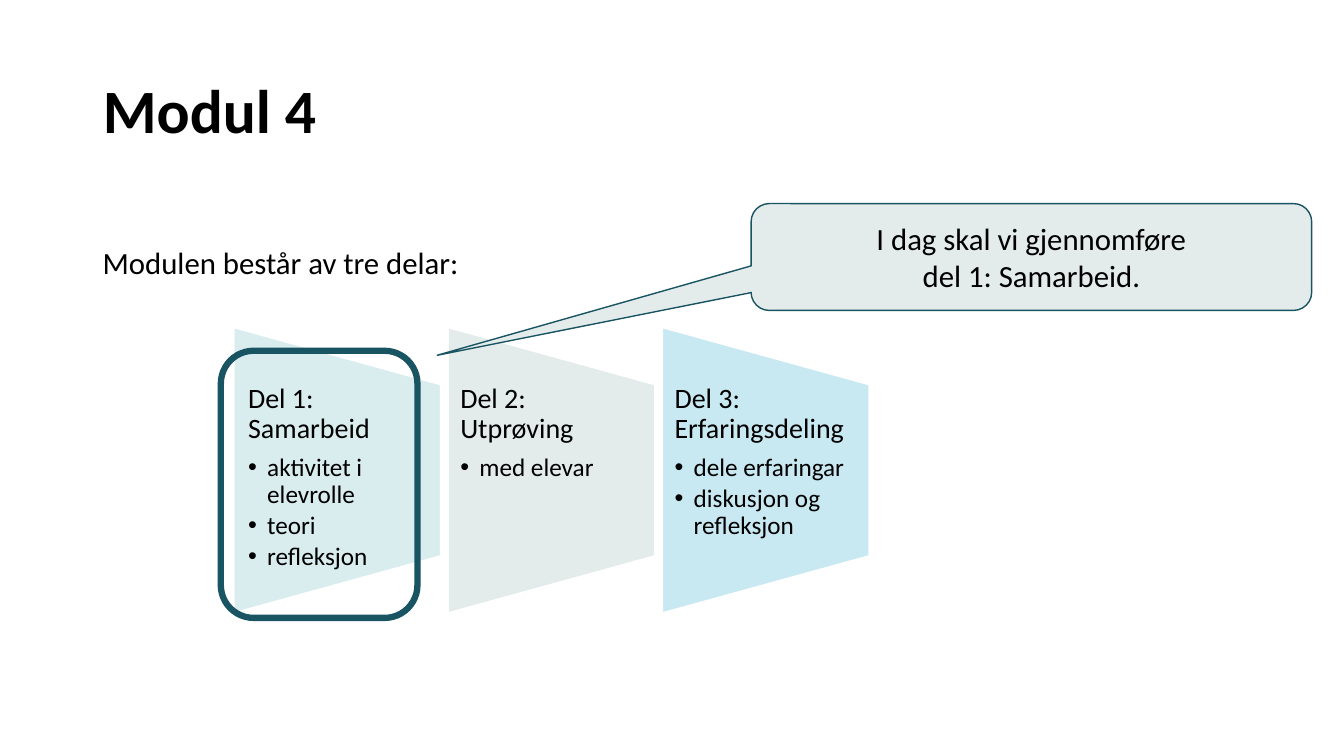
from lxml import etree
from pptx import Presentation
from pptx.dml.color import RGBColor as RGB
from pptx.enum.shapes import MSO_SHAPE as Shape
from pptx.enum.text import MSO_ANCHOR as Anchor, PP_ALIGN as Align
from pptx.oxml.ns import qn
from pptx.util import Inches, Pt

INK, TEAL, MIST = "000000", "195463", "E3ECEA"


def style(shape, fill, line, width):
    """Set fill (None for no fill) and outline, without a shadow."""
    shape.shadow.inherit = False
    if fill:
        shape.fill.solid()
        shape.fill.fore_color.rgb = RGB.from_string(fill)
    else:
        shape.fill.background()
    shape.line.color.rgb = RGB.from_string(line)
    shape.line.width = Pt(width)


def write(para, text, size, bold=False, **form):
    """Add a run to a paragraph; form holds paragraph format values."""
    run = para.add_run()
    run.text = text
    look = {"name": "Calibri", "size": Pt(size), "bold": bold}
    for key, value in look.items():
        setattr(run.font, key, value)
    run.font.color.rgb = RGB.from_string(INK)
    for key, value in form.items():
        setattr(para, key, value)


deck = Presentation()
deck.slide_width, deck.slide_height = Inches(13.33), Inches(7.5)
slide = deck.slides.add_slide(deck.slide_layouts[5])
shapes = slide.shapes

# Title and lead text
title = shapes.title
title.left, title.top = Inches(0.92), Inches(0.4)
title.width, title.height = Inches(11.5), Inches(1.45)
title.text_frame.vertical_anchor = Anchor.MIDDLE
write(title.text_frame.paragraphs[0], "Modul 4", 44, True,
      alignment=Align.LEFT, line_spacing=0.9)

lead = shapes.add_textbox(Inches(0.92), Inches(2.41), Inches(5.12), Inches(4.29))
lead.text_frame.word_wrap = True
write(lead.text_frame.paragraphs[0], "Modulen består av tre delar:", 22,
      line_spacing=0.9, space_before=Pt(10))

# The three parts, each a turned trapezoid with its text on top
parts = [
    ("Del 1: Samarbeid", "D9EDEF", 0.14,
     ["aktivitet i elevrolle", "teori", "refleksjon"]),
    ("Del 2: Utprøving", MIST, 0.12, ["med elevar"]),
    ("Del 3: Erfaringsdeling", "C8E9F1", 0.12,
     ["dele erfaringar", "diskusjon og refleksjon"]),
]
for i, (head, fill, inset, points) in enumerate(parts):
    left = 2.32 + i * 2.125
    panel = shapes.add_shape(Shape.FLOWCHART_MANUAL_OPERATION, Inches(left - 0.39),
                             Inches(3.64), Inches(2.83), Inches(2.05))
    panel.rotation = 270
    style(panel, fill, "FFFFFF", 1)

    box = shapes.add_textbox(Inches(left), Inches(3.81), Inches(2.05), Inches(1.7))
    frame = box.text_frame
    margins = {"word_wrap": True, "margin_top": 0, "margin_bottom": 0,
               "margin_left": Inches(inset), "margin_right": Inches(inset)}
    for key, value in margins.items():
        setattr(frame, key, value)
    write(frame.paragraphs[0], head, 20, line_spacing=0.9, space_after=Pt(7))
    for point in points:
        para = frame.add_paragraph()
        write(para, point, 18, level=1, line_spacing=0.9, space_after=Pt(2.7))
        props = para._p.get_or_add_pPr()
        props.set("marL", str(Inches(0.19)))
        props.set("indent", str(Inches(-0.19)))
        etree.SubElement(props, qn("a:buFont"), typeface="Arial")
        etree.SubElement(props, qn("a:buChar"), char="•")

# Frame around part 1 and the callout that points to it
ring = shapes.add_shape(Shape.ROUNDED_RECTANGLE, Inches(2.19), Inches(3.48),
                        Inches(1.95), Inches(2.65))
style(ring, None, TEAL, 4.5)

note = shapes.add_shape(Shape.ROUNDED_RECTANGULAR_CALLOUT, Inches(7.45),
                        Inches(2.02), Inches(5.56), Inches(1.06))
for i, value in enumerate([-1.06, 0.92, 0.17]):
    note.adjustments[i] = value
style(note, MIST, TEAL, 1)
note.text_frame.vertical_anchor = Anchor.MIDDLE
para = note.text_frame.paragraphs[0]
write(para, "I dag skal vi gjennomføre", 22, alignment=Align.CENTER)
para.add_line_break()
write(para, "del 1: Samarbeid.", 22)

deck.save("out.pptx")
